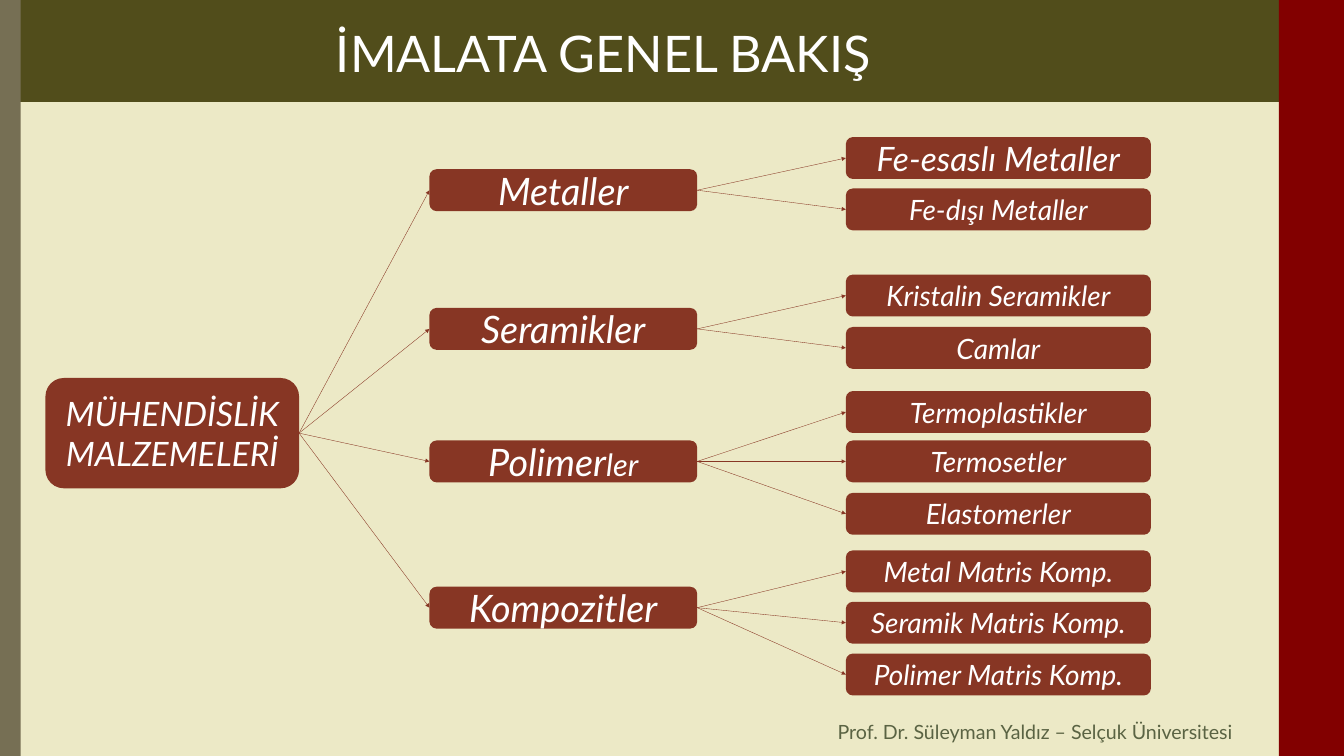
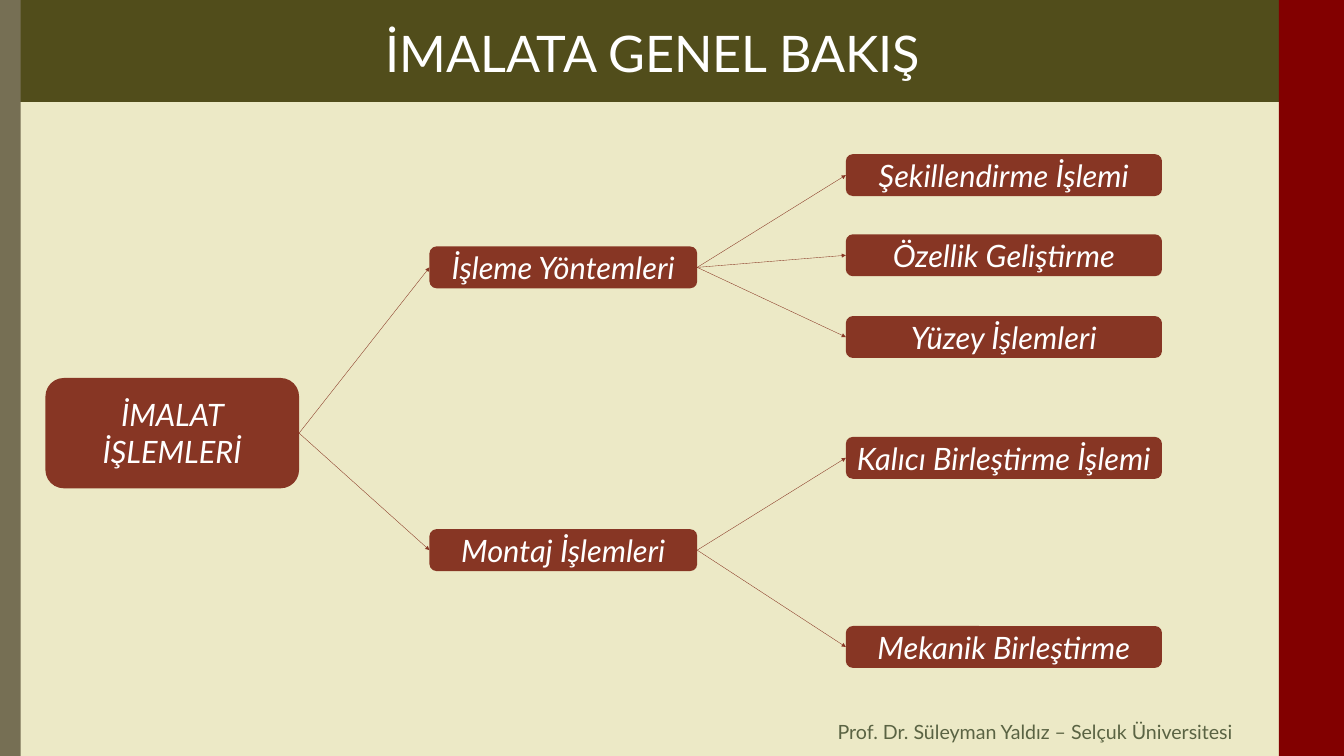
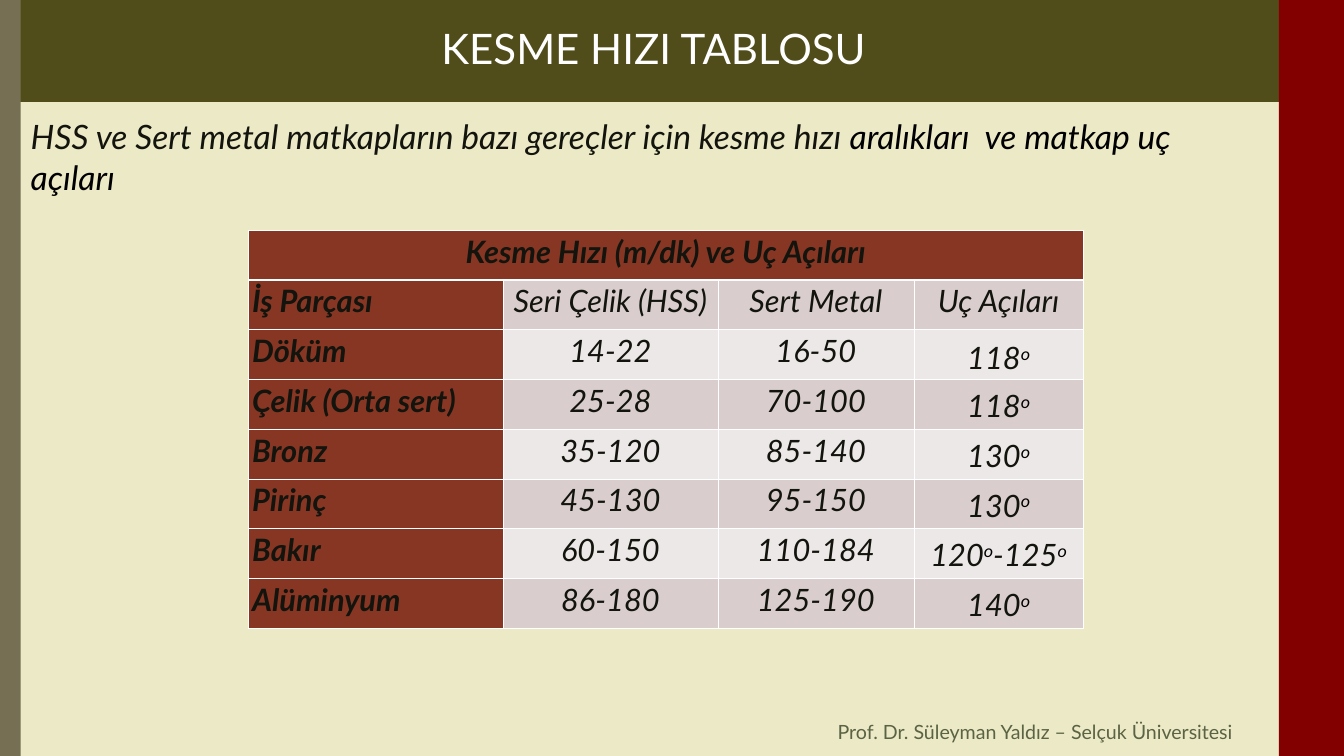
from dataclasses import dataclass

from pptx import Presentation
from pptx.dml.color import RGBColor
from pptx.enum.shapes import MSO_CONNECTOR, MSO_SHAPE
from pptx.enum.text import MSO_ANCHOR, MSO_AUTO_SIZE, PP_ALIGN
from pptx.oxml import parse_xml
from pptx.oxml.ns import nsdecls, qn
from pptx.oxml.xmlchemy import OxmlElement
from pptx.util import Cm, Pt


@dataclass(frozen=True)
class Theme:
    font: str = "Lato"
    degree_font: str = "Calibri"
    cream: str = "ECE9C6"
    olive: str = "514D1B"
    red: str = "820000"
    taupe: str = "766F54"
    rust: str = "873624"
    footer_green: str = "5A6343"
    white: str = "FFFFFF"
    ink: str = "12140D"
    black: str = "000000"
    row_dark: str = "D9CECD"
    row_light: str = "EDE8E8"
    title: int = 72
    title_small: int = 60
    large: int = 54
    intro: int = 48
    medium: int = 44
    leaf: int = 40
    footer: int = 28


theme = Theme()


def write(frame, text, size=theme.medium, color=theme.white, font=theme.font,
          bold=False, italic=True, align=PP_ALIGN.CENTER, raised=False):
    for index, line in enumerate(text.split("\n")):
        paragraph = frame.add_paragraph() if index else frame.paragraphs[-1]
        paragraph.alignment = align
        run = paragraph.add_run()
        run.text = line
        run.font.name = font
        run.font.size = Pt(size)
        run.font.bold = bold
        run.font.italic = italic
        run.font.color.rgb = RGBColor.from_string(color)
        if raised:
            run._r.get_or_add_rPr().set("baseline", "30000")


def add_block(slide, kind, left, top, width, height, fill):
    block = slide.shapes.add_shape(kind, Cm(left), Cm(top), Cm(width), Cm(height))
    block.shadow.inherit = False
    block.fill.solid()
    block.fill.fore_color.rgb = RGBColor.from_string(fill)
    block.line.fill.background()
    return block


WIDTH, HEIGHT = 67.72, 38.1
deck = Presentation()
deck.slide_width, deck.slide_height = Cm(WIDTH), Cm(HEIGHT)

layout = deck.slide_layouts[5]
layout.background.fill.solid()
layout.background.fill.fore_color.rgb = RGBColor.from_string(theme.cream)
for placeholder in list(layout.placeholders)[1:]:
    layout.shapes.element.remove(placeholder.element)

headings = [
    ("İMALATA GENEL BAKIŞ", 12.32, 36.17, theme.title),
    ("İMALATA GENEL BAKIŞ", 14.25, 37.29, theme.title),
    ("KESME HIZI TABLOSU", 4.37, 57.12, theme.title_small),
]
slides = []
for text, left, width, size in headings:
    slide = deck.slides.add_slide(layout)
    heading = slide.shapes.title
    heading.left, heading.top = Cm(left), Cm(0.99)
    heading.width, heading.height = Cm(width), Cm(3.33)
    heading.text_frame.auto_size = MSO_AUTO_SIZE.NONE
    heading.text_frame.vertical_anchor = MSO_ANCHOR.TOP
    write(heading.text_frame, text, size=size, italic=False)
    slides.append(slide)

materials, processes, speeds = slides

author = materials.shapes.add_textbox(Cm(41.96), Cm(36.14), Cm(21.13), Cm(1.45))
author.text_frame.word_wrap = False
write(author.text_frame, "Prof. Dr. Süleyman Yaldız – Selçuk Üniversitesi", size=theme.footer,
      color=theme.footer_green, italic=False, align=PP_ALIGN.LEFT)
bands = [
    add_block(materials, MSO_SHAPE.RECTANGLE, *band)
    for band in [
        (0, 0, WIDTH, 5.13, theme.olive),
        (64.44, 0, 3.28, HEIGHT, theme.red),
        (0, 0, 1.04, HEIGHT, theme.taupe),
    ]
]
for shared in [author, *bands]:
    layout.shapes.element.append(shared.element)

ROOT_AREA = (2.29, 19.05, 12.78, 5.56)
BRANCH_LEFT, BRANCH_WIDTH = 21.64, 13.49
LEAF_LEFT, NODE_HEIGHT = 42.62, 2.11

trees = [
    (materials, "MÜHENDİSLİK\nMALZEMELERİ", theme.intro, 15.37, [
        (8.53, [("Metaller", theme.large)], [
            (6.91, "Fe-esaslı Metaller", theme.intro),
            (9.5, "Fe-dışı Metaller", theme.leaf),
        ]),
        (15.52, [("Seramikler", theme.large)], [
            (13.84, "Kristalin Seramikler", theme.leaf),
            (16.48, "Camlar", theme.leaf),
        ]),
        (22.2, [("Polimer", theme.large), ("ler", theme.medium)], [
            (19.71, "Termoplastikler", theme.leaf),
            (22.2, "Termosetler", theme.leaf),
            (24.84, "Elastomerler", theme.leaf),
        ]),
        (29.57, [("Kompozitler", theme.large)], [
            (27.74, "Metal Matris Komp.", theme.leaf),
            (30.33, "Seramik Matris Komp.", theme.leaf),
            (32.94, "Polimer Matris Komp.", theme.leaf),
        ]),
    ]),
    (processes, "İMALAT İŞLEMLERİ", theme.medium, 15.93, [
        (12.42, [("İşleme Yöntemleri", theme.medium)], [
            (7.77, "Şekillendirme İşlemi", theme.medium),
            (11.81, "Özellik Geliştirme", theme.medium),
            (15.93, "Yüzey İşlemleri", theme.medium),
        ]),
        (26.67, [("Montaj İşlemleri", theme.medium)], [
            (22.02, "Kalıcı Birleştirme İşlemi", theme.medium),
            (31.55, "Mekanik Birleştirme", theme.medium),
        ]),
    ]),
]

for slide, root_text, root_size, leaf_width, branches in trees:
    root = add_block(slide, MSO_SHAPE.ROUNDED_RECTANGLE, *ROOT_AREA, theme.rust)
    write(root.text_frame, root_text, size=root_size)
    links = []
    for branch_top, runs, leaves in branches:
        branch = add_block(slide, MSO_SHAPE.ROUNDED_RECTANGLE, BRANCH_LEFT, branch_top,
                           BRANCH_WIDTH, NODE_HEIGHT, theme.rust)
        for text, size in runs:
            write(branch.text_frame, text, size=size)
        links.append((root, branch))
        for leaf_top, text, size in leaves:
            leaf = add_block(slide, MSO_SHAPE.ROUNDED_RECTANGLE, LEAF_LEFT, leaf_top,
                             leaf_width, NODE_HEIGHT, theme.rust)
            write(leaf.text_frame, text, size=size)
            links.append((branch, leaf))
    for parent, child in links:
        arrow = slide.shapes.add_connector(MSO_CONNECTOR.STRAIGHT, 0, 0, 0, 0)
        arrow.begin_connect(parent, 3)
        arrow.end_connect(child, 1)
        arrow.line.color.rgb = RGBColor.from_string(theme.rust)
        arrow.line.width = Pt(0.5)
        properties = arrow.element.spPr
        head = OxmlElement("a:tailEnd")
        head.set("type", "triangle")
        properties.find(qn("a:ln")).append(head)
        properties.append(OxmlElement("a:effectLst"))

intro = speeds.shapes.add_textbox(Cm(1.3), Cm(5.74), Cm(60.2), Cm(4.37)).text_frame
intro.word_wrap = True
for text, color in [
    ("HSS ve Sert metal matkapların bazı gereçler için kesme hızı ", theme.ink),
    ("aralıkları  ve matkap uç açıları", theme.black),
]:
    write(intro, text, size=theme.intro, color=color, align=PP_ALIGN.LEFT)

rows = [
    ("Kesme Hızı (m/dk) ve Uç Açıları", "", "", ""),
    ("İş Parçası", "Seri Çelik (HSS)", "Sert Metal", "Uç Açıları"),
    ("Döküm", "14-22", "16-50", "118o"),
    ("Çelik (Orta sert)", "25-28", "70-100", "118o"),
    ("Bronz", "35-120", "85-140", "130o"),
    ("Pirinç", "45-130", "95-150", "130o"),
    ("Bakır", "60-150", "110-184", "120o-125o"),
    ("Alüminyum", "86-180", "125-190", "140o"),
]
column_widths = [12.83, 10.82, 9.88, 8.53]
row_heights = [2.49] + [2.51] * 7
table = speeds.shapes.add_table(len(rows), len(column_widths), Cm(12.52), Cm(11.61),
                                Cm(sum(column_widths)), Cm(sum(row_heights))).table
table.first_row = table.horz_banding = False
for column, width in zip(table.columns, column_widths):
    column.width = Cm(width)
for row, height in zip(table.rows, row_heights):
    row.height = Cm(height)
table.cell(0, 0).merge(table.cell(0, 3))

for r, values in enumerate(rows):
    for c, value in enumerate(values):
        cell = table.cell(r, c)
        cell.margin_left = cell.margin_right = Cm(0.18)
        cell.margin_top = cell.margin_bottom = 0
        for side in "LRTB":
            thick = (r, side) in [(0, "B"), (1, "T")]
            cell._tc.get_or_add_tcPr().append(parse_xml(
                f'<a:ln{side} {nsdecls("a")} w="{Pt(3 if thick else 1)}"><a:solidFill>'
                f'<a:srgbClr val="{theme.white}"/></a:solidFill></a:ln{side}>'))
        is_label = r == 0 or c == 0
        stripe = theme.row_dark if r % 2 else theme.row_light
        cell.fill.solid()
        cell.fill.fore_color.rgb = RGBColor.from_string(theme.rust if is_label else stripe)
        if not value:
            continue
        paragraph = cell.text_frame.paragraphs[0]
        if c == 3 and r > 1:
            cell.vertical_anchor = MSO_ANCHOR.MIDDLE if r == 2 else MSO_ANCHOR.TOP
            for angle in value.split("o")[:-1]:
                write(cell.text_frame, angle, color=theme.ink)
                write(cell.text_frame, "o", color=theme.black, font=theme.degree_font, raised=True)
            paragraph.line_spacing = 1.2
            paragraph.space_after = Pt(3)
        else:
            write(cell.text_frame, value, color=theme.ink, bold=is_label,
                  align=PP_ALIGN.LEFT if r and c == 0 else PP_ALIGN.CENTER)
            paragraph.line_spacing = 1.07

deck.save("out.pptx")
